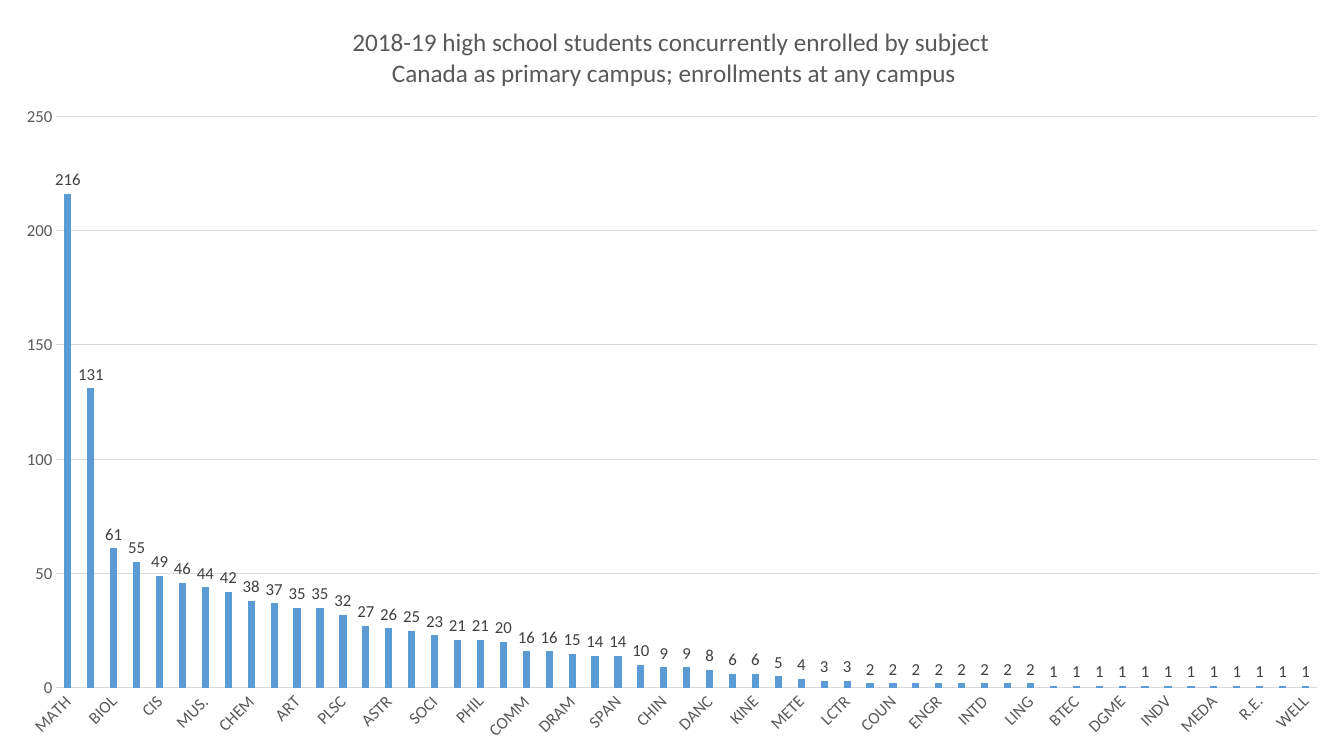
from lxml.etree import SubElement
from pptx import Presentation
from pptx.chart.data import CategoryChartData
from pptx.dml.color import RGBColor
from pptx.enum.chart import XL_CHART_TYPE, XL_LABEL_POSITION, XL_TICK_MARK
from pptx.enum.text import PP_ALIGN
from pptx.oxml.ns import qn
from pptx.util import Pt

FONT = "Calibri"
TEXT_GREY = "595959"
RULE_GREY = "D9D9D9"
WIDTH, HEIGHT = Pt(960), Pt(540)
TITLE_LINES = [
    "2018-19 high school students concurrently enrolled by subject ",
    "Canada as primary campus; enrollments at any campus",
]
SUBJECTS = """MATH ENGL BIOL PSYC CIS FITN MUS. ANTH CHEM BUS. ART ECON PLSC HIST
ASTR ECE. SOCI MART PHIL PHYS COMM LIT. DRAM OCEN SPAN ENVS CHIN FASH DANC GEOG
KINE ASL METE ACTG LCTR CBOT COUN CRER ENGR HSCI INTD LIBR LING ADMJ BTEC COOP
DGME ESL INDV LEGL MEDA MGMT R.E. TEAM WELL""".split()
ENROLLMENTS = [
    216, 131, 61, 55, 49, 46, 44, 42, 38, 37, 35, 35, 32, 27, 26, 25, 23, 21, 21,
    20, 16, 16, 15, 14, 14, 10, 9, 9, 8, 6, 6, 5, 4, 3, 3,
] + [2] * 8 + [1] * 12


def color(hex_string):
    """Return the colour for a hex string."""
    return RGBColor.from_string(hex_string)


def style_font(font, size=12, fill=TEXT_GREY):
    """Set typeface, size and colour of a font."""
    font.name, font.size, font.bold = FONT, Pt(size), False
    font.color.rgb = color(fill)


def write_text(frame, lines, **style):
    """Write centred lines as paragraphs in one format."""
    for index, line in enumerate(lines):
        paragraph = frame.add_paragraph() if index else frame.paragraphs[0]
        paragraph.alignment = PP_ALIGN.CENTER
        run = paragraph.add_run()
        run.text = line
        style_font(run.font, **style)


def style_rule(line):
    """Give a line the thin grey rule style."""
    line.color.rgb = color(RULE_GREY)
    line.width = Pt(0.75)


def place(element, **settings):
    """Fix the position of a chart part by fractions of the chart."""
    layout = element.find(qn("c:layout"))
    if layout is None:
        layout = SubElement(element, qn("c:layout"))
        if element.tag == qn("c:plotArea"):
            element.insert(0, layout)
        else:
            element.find(qn("c:tx")).addnext(layout)
    manual = SubElement(layout, qn("c:manualLayout"))
    for tag, value in settings.items():
        SubElement(manual, qn(f"c:{tag}")).set("val", str(value))


def style_axes(chart):
    """Format the subject axis and the enrollment axis."""
    subjects, counts = chart.category_axis, chart.value_axis
    for axis in (subjects, counts):
        axis.major_tick_mark = axis.minor_tick_mark = XL_TICK_MARK.NONE
        style_font(axis.tick_labels.font)
    style_rule(subjects.format.line)
    subjects_body = subjects.tick_labels.font._element.getparent().getparent()
    subjects_body = subjects_body.getparent().find(qn("a:bodyPr"))
    subjects_body.set("rot", "-2700000")
    counts.format.line.fill.background()
    counts.minimum_scale, counts.maximum_scale, counts.major_unit = 0, 250, 50
    style_rule(counts.major_gridlines.format.line)


def style_columns(plot):
    """Format the columns and their value labels."""
    plot.gap_width, plot.overlap = 219, -27
    plot.vary_by_categories = False
    columns = plot.series[0]
    columns.format.fill.solid()
    columns.format.fill.fore_color.rgb = color("5B9BD5")
    labels = columns.data_labels
    labels.show_value = True
    labels.position = XL_LABEL_POSITION.OUTSIDE_END
    style_font(labels.font, fill="404040")


def add_enrollment_chart(slide):
    """Add the column chart of enrollments by subject."""
    enrollment_data = CategoryChartData()
    enrollment_data.categories = SUBJECTS
    enrollment_data.add_series("Series 1", ENROLLMENTS)
    chart = slide.shapes.add_chart(
        XL_CHART_TYPE.COLUMN_CLUSTERED, 0, 0, WIDTH, HEIGHT, enrollment_data
    ).chart
    style_font(chart.font, fill="000000")
    chart.has_legend = False
    write_text(chart.chart_title.text_frame, TITLE_LINES, size=18)
    chart.chart_title.include_in_layout = False
    style_axes(chart)
    style_columns(chart.plots[0])
    place(chart.chart_title._element, xMode="edge", yMode="edge", x=0.26, y=0.03)
    place(
        chart._chartSpace.find(".//" + qn("c:plotArea")),
        layoutTarget="inner", xMode="edge", yMode="edge",
        x=0.042, y=0.154, w=0.938, h=0.756,
    )


def main():
    """Build and save the slide."""
    deck = Presentation()
    deck.slide_width, deck.slide_height = WIDTH, HEIGHT
    add_enrollment_chart(deck.slides.add_slide(deck.slide_layouts[6]))
    deck.save("out.pptx")


if __name__ == "__main__":
    main()
